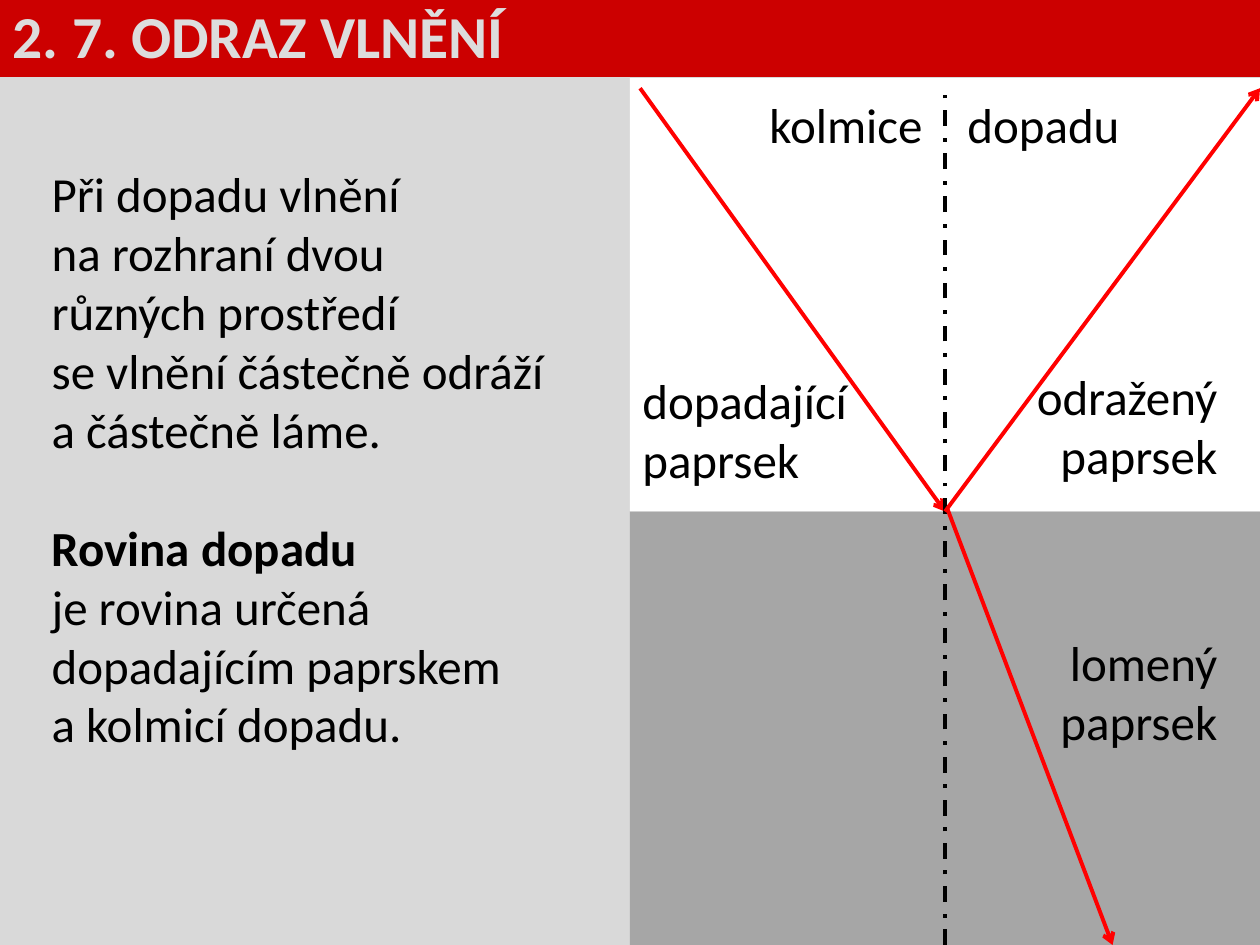
from dataclasses import dataclass
from typing import Optional

import pptx
import pptx.dml.color
import pptx.enum.dml
import pptx.enum.shapes
import pptx.enum.text
import pptx.oxml
import pptx.oxml.ns
import pptx.util

Inches = pptx.util.Inches
Pt = pptx.util.Pt
ALIGN = pptx.enum.text.PP_ALIGN
DASH = pptx.enum.dml.MSO_LINE

COLORS = {
    "background": "D9D9D9", "banner": "CC0000", "heading": "DDDDDD",
    "upper": "FFFFFF", "lower": "A6A6A6", "ray": "FF0000", "ink": "000000",
}
FONT = "Calibri"
TEXT_SIZE = 28
AXIS_X, BOUNDARY_Y = 7.5, 4.06
MEDIUM_LEFT, MEDIUM_WIDTH, MEDIUM_HEIGHT = 5, 5, 3.44
NORMAL_LABEL_WIDTH, NORMAL_LABEL_GAP = 1.6, 0.08


@dataclass
class Label:
    text: str
    left: float
    top: float
    width: float = 2.03
    height: float = 1.04
    align: ALIGN = ALIGN.RIGHT


@dataclass
class Line:
    start: tuple[float, float]
    end: tuple[float, float]
    color: str = "ray"
    dash: Optional[DASH] = None
    arrow: bool = True
    start_site: Optional[int] = None  # connection sites on the lower medium
    end_site: Optional[int] = None


LABELS = [
    Label("kolmice", AXIS_X - NORMAL_LABEL_GAP - NORMAL_LABEL_WIDTH, 0.7,
          NORMAL_LABEL_WIDTH, 0.57),
    Label("dopadu", AXIS_X + NORMAL_LABEL_GAP, 0.7,
          NORMAL_LABEL_WIDTH, 0.57, ALIGN.LEFT),
    Label("dopadající paprsek", 5, 2.89, align=ALIGN.LEFT),
    Label("odražený\vpaprsek", 7.73, 2.86),
    Label("lomený\vpaprsek", 7.73, 4.97),
]
IMPACT = (AXIS_X, BOUNDARY_Y)
LINES = [
    Line((5.08, 0.7), IMPACT, end_site=0),
    Line((AXIS_X, 7.5), (AXIS_X, 0.7), "ink", DASH.DASH_DOT, False, start_site=2),
    Line(IMPACT, (10, 0.7), start_site=0),
    Line((7.52, 4.04), (8.83, 7.5)),
]
DEFINITIONS = [
    "Při dopadu vlnění\vna rozhraní dvou\vrůzných prostředí\v"
    "se vlnění částečně odráží\va částečně láme.",
    "Rovina dopadu",
    "je rovina určená dopadajícím paprskem\va kolmicí dopadu.",
]


def rgb(name: str) -> pptx.dml.color.RGBColor:
    return pptx.dml.color.RGBColor.from_string(COLORS[name])


def place(shape, left: float, top: float, width: float, height: float) -> None:
    shape.left, shape.top = Inches(left), Inches(top)
    shape.width, shape.height = Inches(width), Inches(height)


def format_frame(frame, size: int, color: str, align: ALIGN, bold: bool = False) -> None:
    frame.word_wrap = True
    frame.auto_size = pptx.enum.text.MSO_AUTO_SIZE.NONE
    frame.vertical_anchor = pptx.enum.text.MSO_ANCHOR.TOP
    for paragraph in frame.paragraphs:
        paragraph.alignment = align
        for run in paragraph.runs:
            run.font.name, run.font.size, run.font.bold = FONT, Pt(size), bold
            run.font.color.rgb = rgb(color)


def add_medium(slide, top: float, color: str):
    medium = slide.shapes.add_shape(
        pptx.enum.shapes.MSO_SHAPE.RECTANGLE, Inches(MEDIUM_LEFT), Inches(top),
        Inches(MEDIUM_WIDTH), Inches(MEDIUM_HEIGHT))
    medium.shadow.inherit = False
    medium.fill.solid()
    medium.fill.fore_color.rgb = rgb(color)
    medium.line.fill.background()
    return medium


def add_line(slide, line: Line, medium) -> None:
    connector = slide.shapes.add_connector(
        pptx.enum.shapes.MSO_CONNECTOR.STRAIGHT,
        *(Inches(value) for value in line.start + line.end))
    if line.start_site is not None:
        connector.begin_connect(medium, line.start_site)
    if line.end_site is not None:
        connector.end_connect(medium, line.end_site)
    connector.line.color.rgb = rgb(line.color)
    connector.line.width = Pt(2.25)
    if line.dash is not None:
        connector.line.dash_style = line.dash
    properties = connector._element.spPr
    if line.arrow:
        outline = properties.find(pptx.oxml.ns.qn("a:ln"))
        outline.append(pptx.oxml.parse_xml(
            f'<a:tailEnd {pptx.oxml.ns.nsdecls("a")} type="arrow"/>'))
    properties.append(pptx.oxml.parse_xml(
        f'<a:effectLst {pptx.oxml.ns.nsdecls("a")}/>'))


def add_label(slide, label: Label) -> None:
    box = slide.shapes.add_textbox(
        Inches(label.left), Inches(label.top), Inches(label.width), Inches(label.height))
    box.text_frame.text = label.text
    format_frame(box.text_frame, TEXT_SIZE, "ink", label.align)


def fill_heading(heading) -> None:
    place(heading, 0, -0.06, 10, 0.67)
    heading.fill.solid()
    heading.fill.fore_color.rgb = rgb("banner")
    heading.text_frame.text = "2. 7. ODRAZ VLNĚNÍ"
    format_frame(heading.text_frame, 34, "heading", ALIGN.LEFT, bold=True)


def fill_definitions(definitions) -> None:
    place(definitions, 0.31, 1.25, 4.38, 4.98)
    frame = definitions.text_frame
    frame.text = "\n".join(DEFINITIONS)
    format_frame(frame, TEXT_SIZE, "ink", ALIGN.LEFT)
    for paragraph in frame.paragraphs:
        paragraph.space_before = Pt(0)
        properties = paragraph._p.get_or_add_pPr()
        properties.set("marL", "0")
        properties.set("indent", "0")
        properties.append(pptx.oxml.parse_xml(
            f'<a:buNone {pptx.oxml.ns.nsdecls("a")}/>'))
    term = frame.paragraphs[1]
    term.space_before = Pt(34)
    term.runs[0].font.bold = True


def main() -> None:
    deck = pptx.Presentation()
    deck.slide_width, deck.slide_height = Inches(10), Inches(7.5)
    slide = deck.slides.add_slide(deck.slide_layouts[1])
    slide.background.fill.solid()
    slide.background.fill.fore_color.rgb = rgb("background")

    # Heading and definitions
    fill_heading(slide.shapes.title)
    fill_definitions(slide.placeholders[1])

    # The two media meeting at the boundary
    lower_medium = add_medium(slide, BOUNDARY_Y, "lower")
    add_medium(slide, BOUNDARY_Y - MEDIUM_HEIGHT, "upper")

    # Rays, normal and their labels
    for line in LINES:
        add_line(slide, line, lower_medium)
    for label in LABELS:
        add_label(slide, label)

    deck.save("out.pptx")


if __name__ == "__main__":
    main()
